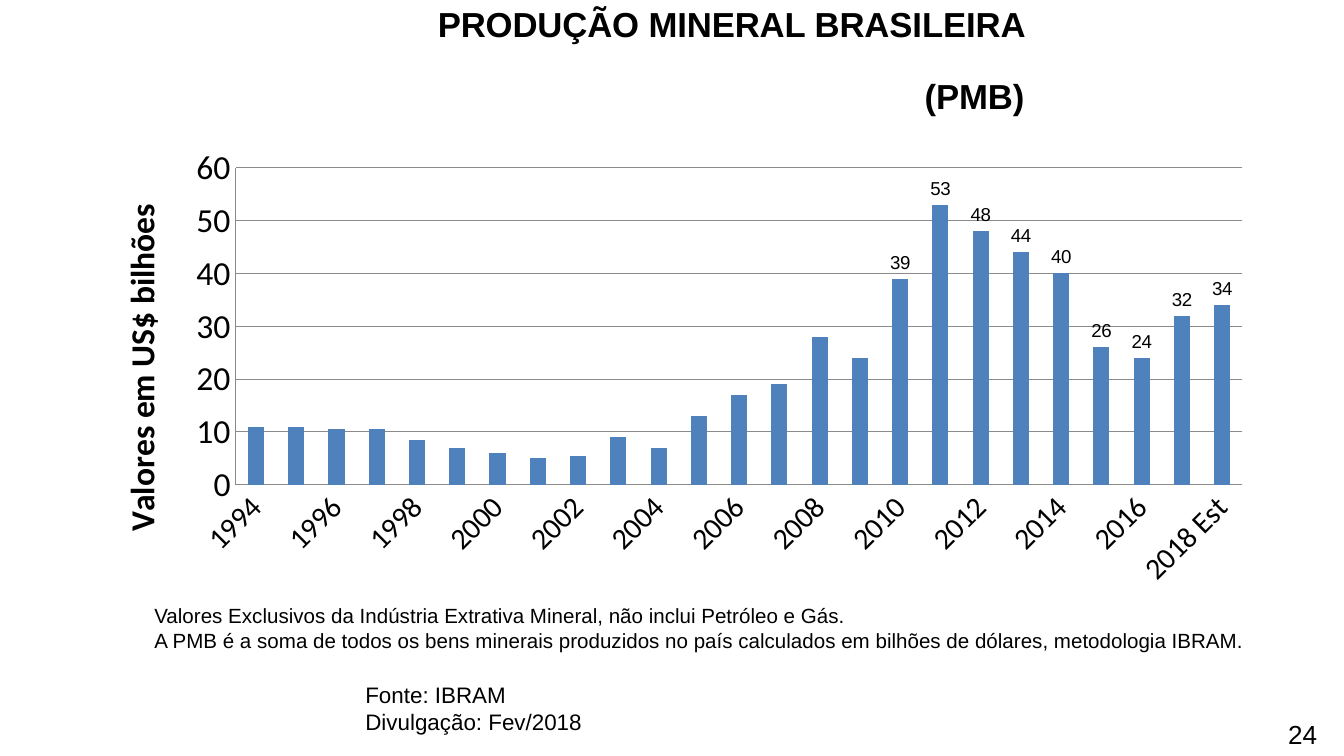
from lxml.etree import SubElement
from pptx import Presentation
from pptx.chart.data import CategoryChartData
from pptx.dml.color import RGBColor
from pptx.enum.chart import XL_CHART_TYPE as ChartType
from pptx.enum.chart import XL_LABEL_POSITION as LabelPosition
from pptx.enum.chart import XL_TICK_MARK as TickMark
from pptx.enum.text import MSO_ANCHOR as Anchor
from pptx.enum.text import MSO_AUTO_SIZE as AutoSize
from pptx.enum.text import PP_ALIGN as Align
from pptx.oxml.ns import qn
from pptx.util import Inches, Pt

BLACK = RGBColor(0x00, 0x00, 0x00)
WHITE = RGBColor(0xFF, 0xFF, 0xFF)
GRAY = RGBColor(0x8B, 0x8B, 0x8B)
BLUE = RGBColor(0x4F, 0x81, 0xBD)

YEARS = [str(year) for year in range(1994, 2018)] + ["2018 Est"]
PRODUCTION = [11, 11, 10.5, 10.5, 8.5, 7, 6, 5, 5.5, 9, 7, 13, 17,
              19, 28, 24, 39, 53, 48, 44, 40, 26, 24, 32, 34]
FIRST_LABELLED = YEARS.index("2010")

NOTES = [
    "Valores Exclusivos da Indústria Extrativa Mineral, não inclui Petróleo e Gás.",
    "A PMB é a soma de todos os bens minerais produzidos no país calculados em "
    "bilhões de dólares, metodologia IBRAM.",
]


def set_font(font, size, name="Arial", bold=False):
    font.name, font.size, font.bold = name, Pt(size), bold
    font.color.rgb = BLACK


def add_text(page, lines, left, top, width, height, size, bold=False,
             align=Align.LEFT, anchor=Anchor.TOP, wrap=True, baseline=None, tabs=()):
    box = page.shapes.add_textbox(Inches(left), Inches(top),
                                  Inches(width), Inches(height))
    frame = box.text_frame
    frame.word_wrap = wrap
    frame.auto_size = AutoSize.NONE if wrap else AutoSize.SHAPE_TO_FIT_TEXT
    frame.vertical_anchor = anchor
    for index, line in enumerate(lines):
        para = frame.add_paragraph() if index else frame.paragraphs[0]
        para.alignment = align
        if tabs:
            add_tab_stops(para, tabs)
        span = para.add_run()
        span.text = line
        set_font(span.font, size, bold=bold)
        if baseline:
            span._r.get_or_add_rPr().set("baseline", str(baseline * 1000))


def add_tab_stops(para, positions):
    stops = SubElement(para._p.get_or_add_pPr(), qn("a:tabLst"))
    for position in positions:
        SubElement(stops, qn("a:tab"), pos=str(Inches(position)), algn="l")


def style_axis(axis, size):
    axis.major_tick_mark = axis.minor_tick_mark = TickMark.NONE
    set_font(axis.tick_labels.font, size, name="Calibri")
    style_line(axis.format.line)


def style_line(line):
    line.color.rgb = GRAY
    line.width = Pt(0.5)


def place_plot(chart, **fractions):
    """Fix the inner plot area and fill it white."""
    area = chart._chartSpace.chart.plotArea
    for old in area.findall(qn("c:layout")):
        area.remove(old)
    layout = SubElement(area, qn("c:layout"))
    area.insert(0, layout)
    manual = SubElement(layout, qn("c:manualLayout"))
    settings = {"layoutTarget": "inner", "xMode": "edge", "yMode": "edge"}
    for tag, value in {**settings, **fractions}.items():
        SubElement(manual, qn(f"c:{tag}")).set("val", str(value))
    properties = SubElement(area, qn("c:spPr"))
    fill = SubElement(properties, qn("a:solidFill"))
    SubElement(fill, qn("a:srgbClr")).set("val", str(WHITE))


def add_production_chart(page):
    data = CategoryChartData()
    data.categories = YEARS
    data.add_series("Series 1", PRODUCTION)
    chart = page.shapes.add_chart(ChartType.COLUMN_CLUSTERED, Inches(0.66), Inches(1.03),
                                  Inches(8.76), Inches(3.41), data).chart
    chart.has_legend = chart.has_title = False
    set_font(chart.font, 10)
    place_plot(chart, x=0.125, y=0.064, w=0.855, h=0.692)

    # Axes
    years, values = chart.category_axis, chart.value_axis
    style_axis(years, 16)
    style_axis(values, 18)
    years._element.find(qn("c:txPr")).find(qn("a:bodyPr")).set("rot", "-2700000")
    values.minimum_scale, values.maximum_scale, values.major_unit = 0, 60, 10
    values.tick_labels.number_format = "General"
    values.tick_labels.number_format_is_linked = False
    values.has_major_gridlines = True
    style_line(values.major_gridlines.format.line)
    title = values.axis_title.text_frame
    title.text = "Valores em US$ bilhões"
    set_font(title.paragraphs[0].runs[0].font, 18, name="Calibri", bold=True)

    # Columns, with values shown from 2010 on
    plot = chart.plots[0]
    plot.gap_width = 150
    plot.vary_by_categories = False
    series = plot.series[0]
    series.format.fill.solid()
    series.format.fill.fore_color.rgb = BLUE
    series.data_labels.show_value = False
    for index in range(FIRST_LABELLED, len(YEARS)):
        label = series.points[index].data_label
        label.position = LabelPosition.OUTSIDE_END
        set_font(label.font, 10)


def main():
    deck = Presentation()
    deck.slide_width = Inches(10)
    deck.slide_height = deck.slide_width * 9 // 16
    page = deck.slides.add_slide(deck.slide_layouts[6])

    # Notes, heading, source and page number
    add_text(page, NOTES, 1.05, 4.44, 8.36, 0.46, size=11)
    add_text(page, ["PRODUÇÃO MINERAL BRASILEIRA (PMB)"], 2.35, 0.19, 5.37, 0.63,
             size=32, bold=True, align=Align.RIGHT, anchor=Anchor.MIDDLE,
             wrap=False, baseline=30)
    add_text(page, ["Fonte: IBRAM \t\t\tDivulgação: Fev/2018"], 2.62, 5.02, 4.32, 0.3,
             size=12, wrap=False, tabs=(2, 3, 4))
    add_text(page, ["24"], 7.65, 5.3, 2.25, 0.3, size=14, align=Align.RIGHT)

    add_production_chart(page)
    deck.save("out.pptx")


if __name__ == "__main__":
    main()
